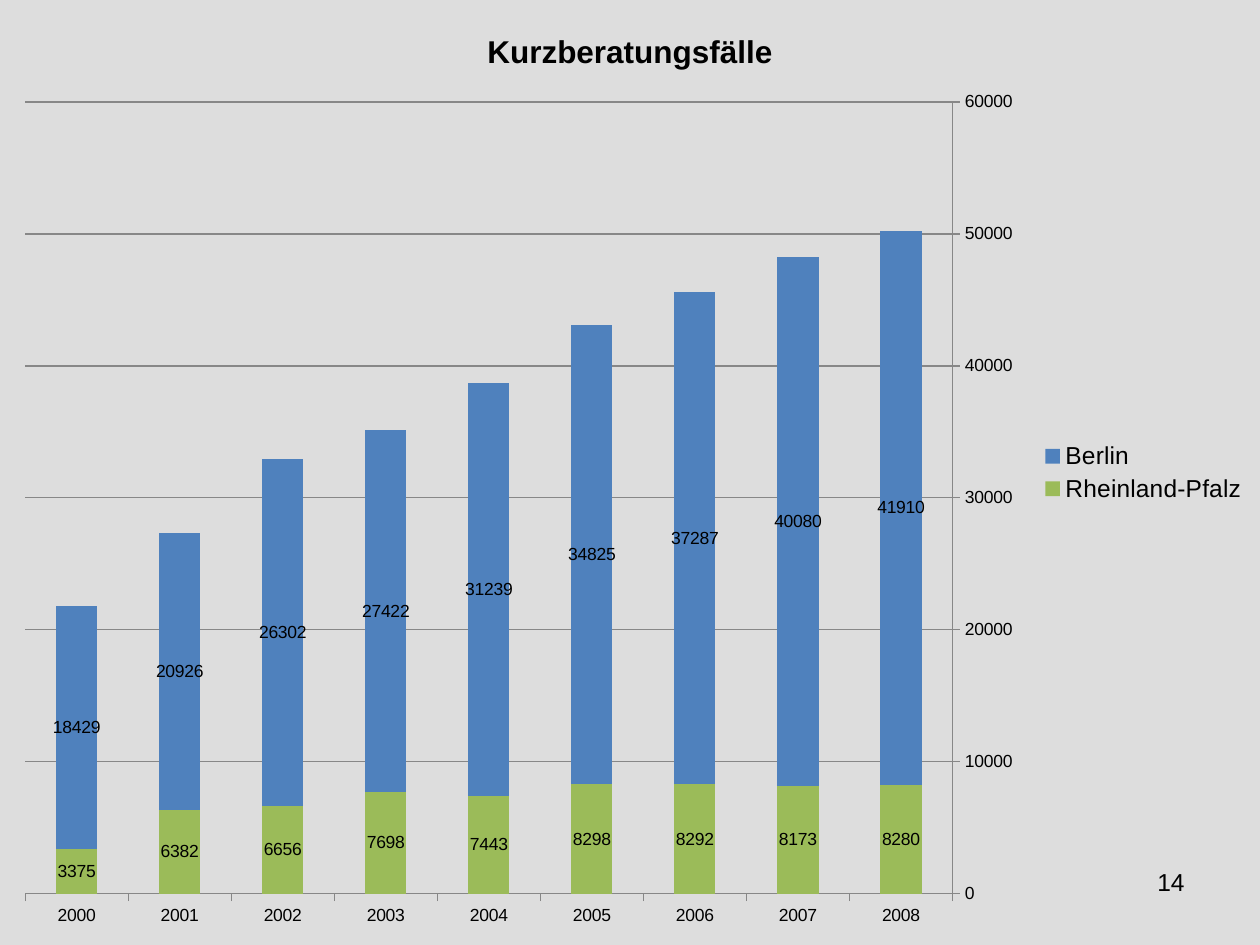
from dataclasses import dataclass
from pptx import Presentation
from pptx import util as u
from pptx.chart import data as cd
from pptx.dml.color import RGBColor
from pptx.enum import chart as ce, text
from pptx.oxml import parse_xml
from pptx.oxml.ns import nsdecls

BLACK = RGBColor(0, 0, 0)
GREY = RGBColor(0xDD, 0xDD, 0xDD)
RULE = RGBColor(0x87, 0x87, 0x87)
GREEN = RGBColor(0x9B, 0xBB, 0x59)
BLUE = RGBColor(0x4F, 0x81, 0xBD)
FACE = "Arial"
WIDE, HIGH = u.Inches(10), u.Inches(7.5)


@dataclass(frozen=True)
class Area:
    x: float
    y: float
    w: float
    h: float

    def emu(self) -> tuple:
        return (int(self.x * WIDE), int(self.y * HIGH),
                int(self.w * WIDE), int(self.h * HIGH))


@dataclass(frozen=True)
class Land:
    name: str
    color: RGBColor
    cases: tuple


FULL = Area(0, 0, 1, 1)
PLOT = Area(0.02, 0.108, 0.736, 0.838)
PAGE = Area(0.717, 0.911, 0.233, 0.069)
YEARS = [str(year) for year in range(2008, 1999, -1)]
LANDS = (
    Land("Rheinland-Pfalz", GREEN,
         (8280, 8173, 8292, 8298, 7443, 7698, 6656, 6382, 3375)),
    Land("Berlin", BLUE,
         (41910, 40080, 37287, 34825, 31239, 27422, 26302, 20926, 18429)),
)


def style(font, size: float, bold: bool = False) -> None:
    font.name, font.size, font.bold = FACE, u.Pt(size), bold
    font.color.rgb = BLACK


def add_page(slide, label: str) -> None:
    frame = slide.shapes.add_textbox(*PAGE.emu()).text_frame
    frame.word_wrap = True
    para = frame.paragraphs[0]
    para.alignment = text.PP_ALIGN.RIGHT
    run = para.add_run()
    run.text = label
    style(run.font, 14)


def set_axis(axis) -> None:
    axis.major_tick_mark = ce.XL_TICK_MARK.OUTSIDE
    axis.minor_tick_mark = ce.XL_TICK_MARK.NONE
    axis.format.line.color.rgb = RULE
    axis.format.line.width = u.Pt(0.75)
    style(axis.tick_labels.font, 10)


def set_plot(chart, area: Area) -> None:
    space = chart._chartSpace
    tags = "".join(f'<c:{key} val="{val}"/>' for key, val in (
        ("layoutTarget", "inner"), ("xMode", "edge"), ("yMode", "edge"),
        ("x", area.x), ("y", area.y), ("w", area.w), ("h", area.h)))
    plot = space.chart.plotArea
    for old in plot.findall(plot.tag.replace("plotArea", "layout")):
        plot.remove(old)
    plot.insert(0, parse_xml(
        f'<c:layout {nsdecls("c")}><c:manualLayout>{tags}'
        '</c:manualLayout></c:layout>'))
    space.chart.addnext(parse_xml(
        f'<c:spPr {nsdecls("c", "a")}><a:noFill/>'
        '<a:ln><a:noFill/></a:ln></c:spPr>'))


def add_cases(slide) -> None:
    data = cd.CategoryChartData(number_format="General")
    data.categories = YEARS
    for land in LANDS:
        data.add_series(land.name, land.cases)
    chart = slide.shapes.add_chart(
        ce.XL_CHART_TYPE.COLUMN_STACKED, *FULL.emu(), data).chart
    style(chart.font, 10)
    chart.has_title = True
    run = chart.chart_title.text_frame.paragraphs[0].add_run()
    run.text = "Kurzberatungsfälle"
    style(run.font, 18, True)
    chart.has_legend = True
    chart.legend.position = ce.XL_LEGEND_POSITION.RIGHT
    chart.legend.include_in_layout = False
    style(chart.legend.font, 14)
    for axis in (chart.category_axis, chart.value_axis):
        set_axis(axis)
    chart.category_axis.reverse_order = True
    scale = chart.value_axis
    scale.minimum_scale, scale.maximum_scale = 0, 60000
    scale.major_unit = 10000
    scale.has_major_gridlines = True
    scale.major_gridlines.format.line.color.rgb = RULE
    scale.major_gridlines.format.line.width = u.Pt(0.75)
    plot = chart.plots[0]
    plot.gap_width, plot.overlap = 150, 100
    plot.vary_by_categories = False
    for bars, land in zip(plot.series, LANDS):
        bars.format.fill.solid()
        bars.format.fill.fore_color.rgb = land.color
        bars.data_labels.show_value = True
        bars.data_labels.position = ce.XL_LABEL_POSITION.CENTER
        style(bars.data_labels.font, 10)
    set_plot(chart, PLOT)


def main() -> None:
    deck = Presentation()
    deck.slide_width, deck.slide_height = WIDE, HIGH
    slide = deck.slides.add_slide(deck.slide_layouts[6])
    slide.background.fill.solid()
    slide.background.fill.fore_color.rgb = GREY
    add_page(slide, "14")
    add_cases(slide)
    deck.save("out.pptx")


if __name__ == "__main__":
    main()
